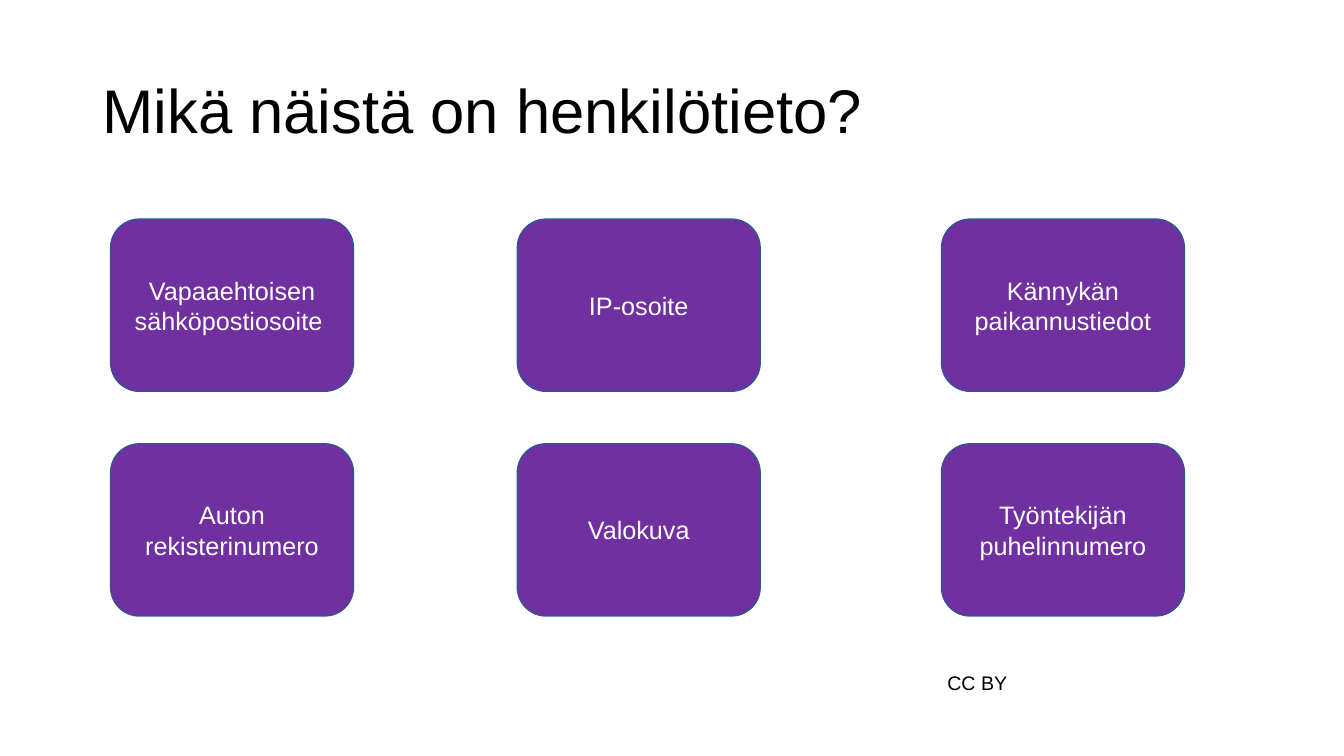
from pptx import Presentation
from pptx.dml.color import RGBColor
from pptx.enum import shapes, text
from pptx.util import Pt

PURPLE = RGBColor(0x70, 0x30, 0xA0)
BLUE = RGBColor(0x32, 0x54, 0x91)
WHITE = RGBColor(0xFF, 0xFF, 0xFF)
BLACK = RGBColor(0, 0, 0)


def write(shape, words, size, color, align):
    frame = shape.text_frame
    frame.text = words
    frame.word_wrap = True
    frame.vertical_anchor = text.MSO_ANCHOR.MIDDLE
    para = frame.paragraphs[0]
    para.alignment = align
    font = para.runs[0].font
    font.name = "Arial"
    font.size = Pt(size)
    font.color.rgb = color
    return frame


deck = Presentation()
deck.slide_width = Pt(960)
deck.slide_height = Pt(540)
slide = deck.slides.add_slide(deck.slide_layouts[6])

title = slide.shapes.add_textbox(Pt(66), Pt(28.75), Pt(828), Pt(104.4))
frame = write(title, "Mikä näistä on henkilötieto?", 44, BLACK, text.PP_ALIGN.LEFT)
frame.paragraphs[0].line_spacing = 0.9

cards = [
    ["Vapaaehtoisen sähköpostiosoite ", "IP-osoite", "Kännykän paikannustiedot"],
    ["Auton rekisterinumero", "Valokuva", "Työntekijän puhelinnumero"],
]
for top, row in zip((156.5, 317), cards):
    for left, words in zip((79, 369.5, 672.5), row):
        card = slide.shapes.add_shape(
            shapes.MSO_SHAPE.ROUNDED_RECTANGLE, Pt(left), Pt(top), Pt(173.5), Pt(123)
        )
        card.shadow.inherit = False
        card.fill.solid()
        card.fill.fore_color.rgb = PURPLE
        card.line.color.rgb = BLUE
        card.line.width = Pt(1)
        write(card, words, 18, WHITE, text.PP_ALIGN.CENTER)

mark = slide.shapes.add_textbox(Pt(669.6), Pt(476), Pt(57.6), Pt(24.5))
frame = write(mark, "CC BY", 14, BLACK, text.PP_ALIGN.LEFT)
frame.word_wrap = False
frame.vertical_anchor = text.MSO_ANCHOR.TOP
frame.auto_size = text.MSO_AUTO_SIZE.SHAPE_TO_FIT_TEXT

deck.save("out.pptx")
